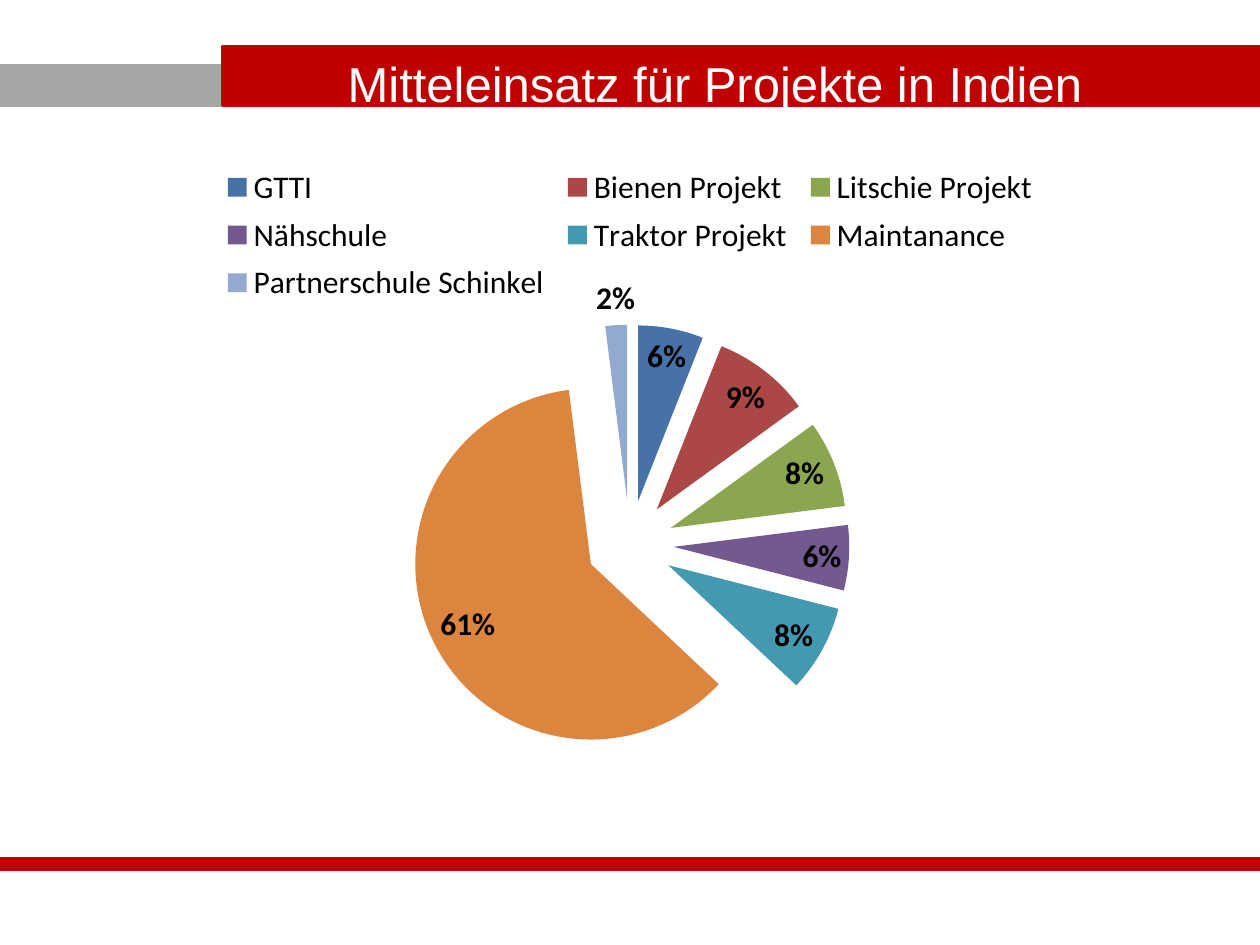
from dataclasses import dataclass

from lxml.etree import SubElement
from pptx import Presentation
from pptx.chart.data import CategoryChartData
from pptx.dml.color import RGBColor
from pptx.enum.chart import XL_CHART_TYPE as ChartType
from pptx.enum.chart import XL_LABEL_POSITION as LabelPosition
from pptx.enum.chart import XL_LEGEND_POSITION as LegendPosition
from pptx.enum.shapes import MSO_SHAPE as Shape
from pptx.enum.text import MSO_ANCHOR as Anchor
from pptx.enum.text import MSO_AUTO_SIZE as AutoSize
from pptx.enum.text import PP_ALIGN as Align
from pptx.oxml import parse_xml
from pptx.oxml.ns import nsdecls, qn
from pptx.util import Pt


@dataclass(frozen=True)
class Theme:
    red: str = "C00000"
    grey: str = "A6A6A6"
    white: str = "FFFFFF"
    black: str = "000000"
    title_font: str = "Arial"
    chart_font: str = "Calibri"
    title_size: int = 28
    chart_size: int = 18


THEME = Theme()
WIDTH, HEIGHT = 720, 540

# Project, share in percent, slice colour
PROJECTS = [
    ("GTTI", 6, "4672A8"),
    ("Bienen Projekt", 9, "AB4744"),
    ("Litschie Projekt", 8, "8AA64F"),
    ("Nähschule", 6, "725990"),
    ("Traktor Projekt", 8, "4299B0"),
    ("Maintanance", 61, "DC853E"),
    ("Partnerschule Schinkel", 2, "93A9CF"),
]


def rgb(colour):
    return RGBColor.from_string(colour)


def add_band(page, box, colour):
    band = page.shapes.add_shape(Shape.RECTANGLE, *map(Pt, box))
    band.shadow.inherit = False
    band.fill.solid()
    band.fill.fore_color.rgb = rgb(colour)
    band.line.color.rgb = rgb(colour)
    band.line.width = Pt(2)


def add_header(page, box, text):
    """Grey tab on the left, red bar on the right with the title on it."""
    left, top, width, height = box
    tab_width, tab_height = 127.5, 22.5
    add_band(page, (left, top + height - tab_height, tab_width, tab_height), THEME.grey)
    add_band(page, (left + tab_width, top, width - tab_width, height), THEME.red)

    title = page.shapes.title
    title.left, title.top = Pt(left + 133), Pt(top - 3.5)
    title.width, title.height = Pt(551), Pt(34)
    page.shapes.element.append(title.element)  # in front of the bar
    frame = title.text_frame
    frame.text = text
    frame.word_wrap = True
    frame.auto_size = AutoSize.NONE
    frame.vertical_anchor = Anchor.TOP
    frame.margin_top, frame.margin_bottom = Pt(7.5), 0
    para = frame.paragraphs[0]
    para.alignment = Align.CENTER
    font = para.runs[0].font
    font.name, font.size = THEME.title_font, Pt(THEME.title_size)
    font.color.rgb = rgb(THEME.white)


def manual_layout(target, x, y, w, h):
    """Layout element in fractions of the chart; target is inner or None."""
    layout = parse_xml(f"<c:layout {nsdecls('c')}><c:manualLayout/></c:layout>")
    settings = [("layoutTarget", target)] if target else []
    settings += [("xMode", "edge"), ("yMode", "edge"),
                 ("x", x), ("y", y), ("w", w), ("h", h)]
    for name, value in settings:
        SubElement(layout[0], qn(f"c:{name}")).set("val", str(value))
    return layout


def style_chart_font(font, bold=False):
    font.name, font.size, font.bold = THEME.chart_font, Pt(THEME.chart_size), bold
    font.color.rgb = rgb(THEME.black)


def add_project_pie(page, box):
    names, shares, colours = zip(*PROJECTS)
    chart_data = CategoryChartData()
    chart_data.categories = names
    chart_data.add_series("Series 1", shares)
    chart = page.shapes.add_chart(ChartType.PIE, *map(Pt, box), chart_data).chart
    chart.has_title = False
    style_chart_font(chart.font)

    chart.has_legend = True
    legend = chart.legend
    legend.position = LegendPosition.TOP
    legend.include_in_layout = False
    style_chart_font(legend.font)
    legend.element if hasattr(legend, "element") else None
    chart_element = chart.element if hasattr(chart, "element") else chart._chartSpace
    legend_position = chart_element.find(f".//{qn('c:legendPos')}")
    legend_position.addnext(manual_layout(None, 0.17, 0.02, 0.66, 0.23))

    plot_area = chart_element.find(f".//{qn('c:plotArea')}")
    for old in plot_area.findall(qn("c:layout")):
        plot_area.remove(old)
    plot_area.insert(0, manual_layout("inner", 0.08, 0.27, 0.84, 0.66))

    plot = chart.plots[0]
    plot.vary_by_categories = True
    series = plot.series[0]
    explosion = parse_xml(f'<c:explosion {nsdecls("c")} val="25"/>')
    plot_area.find(f".//{qn('c:ser')}/{qn('c:tx')}").addnext(explosion)
    for index, colour in enumerate(colours):
        fill = series.points[index].format.fill
        fill.solid()
        fill.fore_color.rgb = rgb(colour)

    labels = series.data_labels
    labels.show_value = False
    labels.show_percentage = True
    labels.number_format, labels.number_format_is_linked = "0%", False
    labels.position = LabelPosition.BEST_FIT
    style_chart_font(labels.font, bold=True)


def main():
    deck = Presentation()
    deck.slide_width, deck.slide_height = Pt(WIDTH), Pt(HEIGHT)
    page = deck.slides.add_slide(deck.slide_layouts[5])
    add_header(page, (0, 26.5, WIDTH, 33.5), "Mitteleinsatz für Projekte in Indien")
    add_band(page, (0, 491, WIDTH, 6), THEME.red)
    add_project_pie(page, (0, 83, WIDTH, 380))
    deck.save("out.pptx")


if __name__ == "__main__":
    main()
